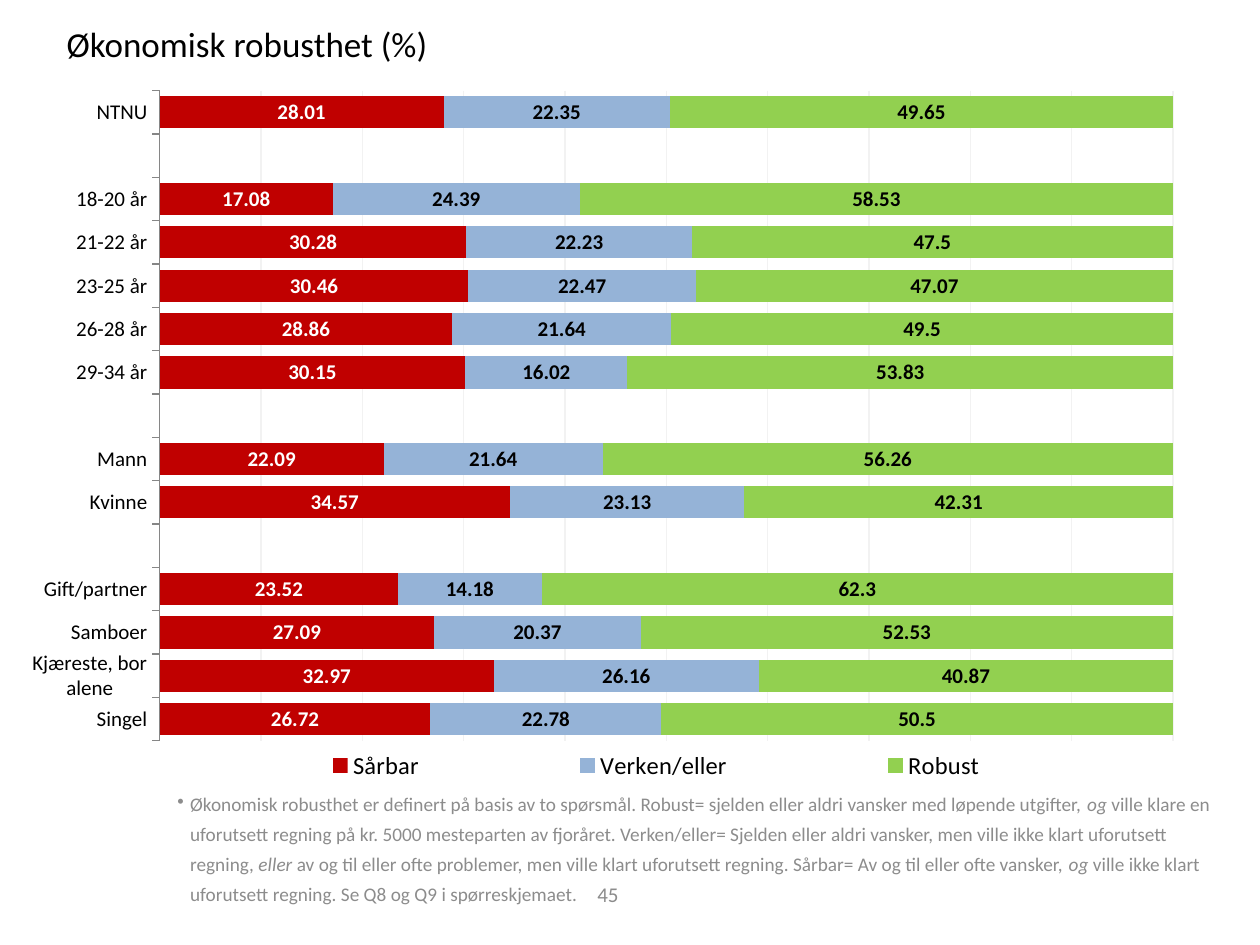
from lxml import etree
from pptx import Presentation
from pptx.chart.data import CategoryChartData
from pptx.dml.color import RGBColor
from pptx.enum.chart import XL_CHART_TYPE, XL_LEGEND_POSITION, XL_TICK_LABEL_POSITION, XL_TICK_MARK
from pptx.enum.text import MSO_ANCHOR, MSO_AUTO_SIZE, PP_ALIGN
from pptx.oxml import parse_xml
from pptx.oxml.ns import nsdecls, qn
from pptx.util import Inches, Pt

BAR_STACKED = XL_CHART_TYPE.BAR_STACKED
LEGEND_RIGHT = XL_LEGEND_POSITION.RIGHT
LABELS_LOW = XL_TICK_LABEL_POSITION.LOW
TICK_OUTSIDE = XL_TICK_MARK.OUTSIDE
TICK_NONE = XL_TICK_MARK.NONE
MIDDLE = MSO_ANCHOR.MIDDLE
TOP = MSO_ANCHOR.TOP
FIT_SHAPE = MSO_AUTO_SIZE.SHAPE_TO_FIT_TEXT
CENTER = PP_ALIGN.CENTER
LEFT = PP_ALIGN.LEFT

BLACK = RGBColor(0x00, 0x00, 0x00)
WHITE = RGBColor(0xFF, 0xFF, 0xFF)
GRAY = RGBColor(0x8C, 0x8C, 0x8C)
GRID = RGBColor(0xF2, 0xF2, 0xF2)
AXIS = RGBColor(0x86, 0x86, 0x86)
RED = RGBColor(0xC0, 0x00, 0x00)
BLUE = RGBColor(0x95, 0xB3, 0xD7)
GREEN = RGBColor(0x92, 0xD0, 0x50)

RESULTS = [
    ("NTNU", 28.01, 22.35, 49.65),
    ("", None, None, None),
    ("18-20 år", 17.08, 24.39, 58.53),
    ("21-22 år", 30.28, 22.23, 47.5),
    ("23-25 år", 30.46, 22.47, 47.07),
    ("26-28 år", 28.86, 21.64, 49.5),
    ("29-34 år", 30.15, 16.02, 53.83),
    ("", None, None, None),
    ("Mann", 22.09, 21.64, 56.26),
    ("Kvinne", 34.57, 23.13, 42.31),
    ("", None, None, None),
    ("Gift/partner", 23.52, 14.18, 62.3),
    ("Samboer", 27.09, 20.37, 52.53),
    ("Kjæreste, bor alene", 32.97, 26.16, 40.87),
    ("Singel", 26.72, 22.78, 50.5),
]
SERIES = [("Sårbar", RED, WHITE), ("Verken/eller", BLUE, BLACK), ("Robust", GREEN, BLACK)]
NOTE = [
    ("Økonomisk robusthet er definert på basis av to spørsmål. Robust= sjelden eller aldri "
     "vansker med løpende utgifter, ", False),
    ("og", True),
    (" ville klare en uforutsett regning på kr. 5000 mesteparten av fjoråret. Verken/eller= "
     "Sjelden eller aldri vansker, men ville ikke klart uforutsett regning, ", False),
    ("eller", True),
    (" av og til eller ofte problemer, men ville klart uforutsett regning. Sårbar= Av og til "
     "eller ofte vansker, ", False),
    ("og", True),
    (" ville ikke klart uforutsett regning. Se Q8 og Q9 i spørreskjemaet.", False),
]


class SlideBuilder:
    font_name = "Calibri"
    width = Inches(10)
    height = Inches(7.5)

    def __init__(self, presentation):
        presentation.slide_width = self.width
        presentation.slide_height = self.height
        self.slide = presentation.slides.add_slide(presentation.slide_layouts[6])

    def place(self, left, top, width, height):
        return (round(left * self.width), round(top * self.height),
                round(width * self.width), round(height * self.height))

    def style(self, font, size, color, bold=None):
        font.name = self.font_name
        font.size = Pt(size)
        font.color.rgb = color
        font.bold = bold

    def text(self, box, runs, size, color, align=LEFT, anchor=TOP, wrap=True):
        shape = self.slide.shapes.add_textbox(*self.place(*box))
        frame = shape.text_frame
        frame.word_wrap = wrap
        frame.vertical_anchor = anchor
        if not wrap:
            frame.auto_size = FIT_SHAPE
        paragraph = frame.paragraphs[0]
        paragraph.alignment = align
        for content, italic in runs:
            run = paragraph.add_run()
            run.text = content
            if italic:
                run.font.italic = True
        self.style(paragraph.font, size, color)
        for run in paragraph.runs:
            self.style(run.font, size, color)
        return paragraph

    def bullet(self, box, runs, size, color):
        paragraph = self.text(box, runs, size, color)
        paragraph.line_spacing = 1.3
        paragraph.space_after = Pt(6)
        properties = paragraph._p.get_or_add_pPr()
        properties.set("marL", str(Inches(0.19)))
        properties.set("indent", str(Inches(-0.1)))
        character = etree.Element(qn("a:buChar"), char="•")
        properties.find(qn("a:defRPr")).addprevious(character)

    def layout(self, left, top, width, height, inner=False):
        target = '<c:layoutTarget val="inner"/>' if inner else ""
        return parse_xml(
            f'<c:layout {nsdecls("c")}><c:manualLayout>{target}'
            '<c:xMode val="edge"/><c:yMode val="edge"/>'
            f'<c:x val="{left}"/><c:y val="{top}"/><c:w val="{width}"/><c:h val="{height}"/>'
            '</c:manualLayout></c:layout>')

    def stacked_bars(self, box, results, series_styles):
        data = CategoryChartData()
        names, *columns = zip(*results)
        data.categories = names
        for (name, _, _), values in zip(series_styles, columns):
            data.add_series(name, values)
        chart = self.slide.shapes.add_chart(BAR_STACKED, *self.place(*box), data).chart
        self.style(chart.font, 18, BLACK)
        chart.has_title = False
        plot = chart.plots[0]
        plot.gap_width = 35
        plot.overlap = 100
        plot.vary_by_categories = False
        for series, (_, fill, label) in zip(plot.series, series_styles):
            series.format.fill.solid()
            series.format.fill.fore_color.rgb = fill
            series.data_labels.show_value = True
            self.style(series.data_labels.font, 12, label, True)
        self.axes(chart)
        self.legend(chart)
        plot_area = chart._chartSpace.chart.plotArea
        for old_layout in plot_area.findall(qn("c:layout")):
            plot_area.remove(old_layout)
        plot_area.insert(0, self.layout(0.113, 0.034, 0.851, 0.897, inner=True))

    def axes(self, chart):
        categories = chart.category_axis
        categories.reverse_order = True
        categories.major_tick_mark = TICK_OUTSIDE
        categories.minor_tick_mark = TICK_NONE
        categories.tick_label_position = LABELS_LOW
        categories.format.line.color.rgb = AXIS
        self.style(categories.tick_labels.font, 12, BLACK)
        values = chart.value_axis
        values.minimum_scale = 0
        values.maximum_scale = 100
        values.major_unit = 10
        values.has_major_gridlines = True
        values.major_gridlines.format.line.color.rgb = GRID
        values.major_gridlines.format.line.width = Pt(0.75)
        values.visible = False

    def legend(self, chart):
        chart.has_legend = True
        legend = chart.legend
        legend.position = LEGEND_RIGHT
        legend.include_in_layout = False
        self.style(legend.font, 14, BLACK)
        element = legend._element
        for old_layout in element.findall(qn("c:layout")):
            element.remove(old_layout)
        element.find(qn("c:legendPos")).addnext(self.layout(0.13, 0.94, 0.8, 0.05))


def main():
    presentation = Presentation()
    builder = SlideBuilder(presentation)
    builder.stacked_bars((0.02, 0.07, 0.945, 0.767), RESULTS, SERIES)
    builder.text((0.043, 0.017, 0.309, 0.058), [("Økonomisk robusthet (%)", False)],
                 20, BLACK, wrap=False)
    builder.text((0.366, 0.92, 0.233, 0.053), [("45", False)], 12, GRAY, CENTER, MIDDLE)
    builder.bullet((0.122, 0.825, 0.858, 0.164), NOTE, 11, GRAY)
    presentation.save("out.pptx")


if __name__ == "__main__":
    main()
